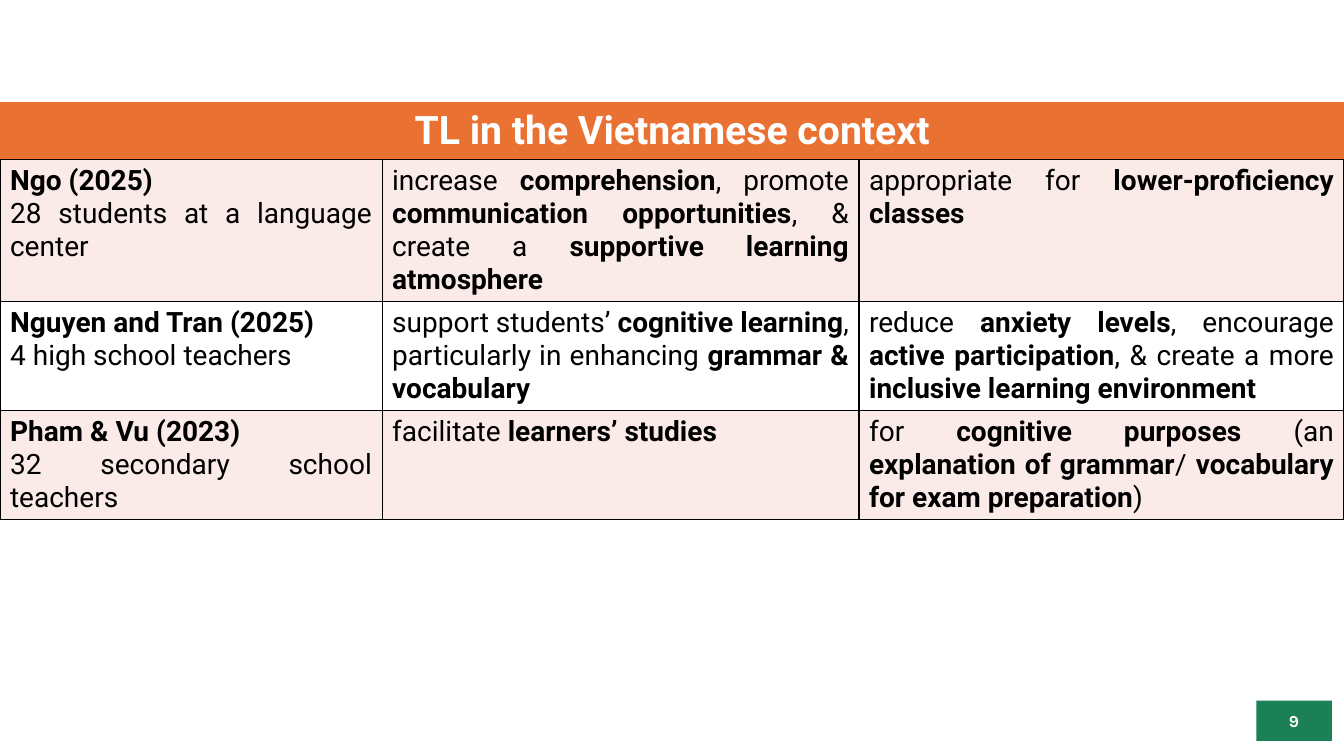
from lxml.etree import SubElement
from pptx import Presentation
from pptx.dml.color import RGBColor
from pptx.enum.shapes import MSO_SHAPE as Shape
from pptx.enum.text import MSO_ANCHOR as Anchor, PP_ALIGN as Align
from pptx.oxml.ns import qn
from pptx.util import Inches, Pt

ORANGE = RGBColor(0xE9, 0x71, 0x32)
PINK = RGBColor(0xFB, 0xEB, 0xE8)
GREEN = RGBColor(0x1B, 0x80, 0x56)
WHITE = RGBColor(0xFF, 0xFF, 0xFF)
BLACK = RGBColor(0, 0, 0)

WIDTH, HEIGHT = Inches(13.33), Inches(7.5)
COLS = (3.79, 4.73, 4.81)
ROWS = (0.56, 1.41, 1.08, 1.08)
TITLE = "*TL in the Vietnamese context*"
STUDIES = (
    ("*Ngo (2025)*\n28 students at a language center",
     "increase *comprehension*, promote *communication opportunities*, "
     "& create a *supportive learning atmosphere*",
     "appropriate for *lower-proficiency classes*"),
    ("*Nguyen and Tran (2025)*\n4 high school teachers",
     "support students’ *cognitive learning*, particularly in enhancing "
     "*grammar & vocabulary*",
     "reduce *anxiety levels*, encourage *active participation*, "
     "& create a more *inclusive learning environment*"),
    ("*Pham & Vu (2023)*\n32 secondary school teachers",
     "facilitate *learners’ studies*",
     "for *cognitive purposes *(an *explanation of grammar*/ "
     "*vocabulary for exam preparation*)"),
)


def write(frame, text, size=20, font="Roboto", color=BLACK, align=Align.JUSTIFY):
    """Fill a text frame; asterisks enclose bold words."""
    for i, line in enumerate(text.split("\n")):
        para = frame.add_paragraph() if i else frame.paragraphs[0]
        para.alignment = align
        for j, part in enumerate(line.split("*")):
            if part:
                run = para.add_run()
                run.text = part
                run.font.size, run.font.name = Pt(size), font
                run.font.bold = j % 2 == 1
                run.font.color.rgb = color


def paint(cell, fill, edge=BLACK):
    """Set the cell's fill and borders; the bottom one is always black."""
    props = cell._tc.get_or_add_tcPr()
    for side in "LRTB":
        line = SubElement(props, qn("a:ln" + side), w=str(Pt(1)))
        color = BLACK if side == "B" else edge
        SubElement(SubElement(line, qn("a:solidFill")), qn("a:srgbClr"), val=str(color))
    cell.fill.solid()
    cell.fill.fore_color.rgb = fill


def add_studies(slide):
    table = slide.shapes.add_table(
        len(ROWS), len(COLS), 0, Inches(1.02), WIDTH, Inches(sum(ROWS))).table
    for col, width in zip(table.columns, COLS):
        col.width = Inches(width)
    for row, height in zip(table.rows, ROWS):
        row.height = Inches(height)
    for cell in table.rows[0].cells:
        paint(cell, ORANGE, edge=ORANGE)
    head = table.cell(0, 0)
    head.merge(table.cell(0, len(COLS) - 1))
    write(head.text_frame, TITLE, size=28, color=WHITE, align=Align.CENTER)
    for r, study in enumerate(STUDIES, 1):
        for c, text in enumerate(study):
            cell = table.cell(r, c)
            paint(cell, PINK if r % 2 else WHITE)
            write(cell.text_frame, text)


def add_number(slide, text):
    box = slide.shapes.add_shape(
        Shape.RECTANGLE, Inches(12.46), Inches(6.95), Inches(0.75), Inches(0.4))
    box.shadow.inherit = False
    box.fill.solid()
    box.fill.fore_color.rgb = GREEN
    box.line.fill.background()
    box.text_frame.vertical_anchor = Anchor.MIDDLE
    write(box.text_frame, text, size=12, font="Karla", color=WHITE, align=Align.CENTER)


def main():
    deck = Presentation()
    deck.slide_width, deck.slide_height = WIDTH, HEIGHT
    slide = deck.slides.add_slide(deck.slide_layouts[6])
    add_number(slide, "*9*")
    add_studies(slide)
    deck.save("out.pptx")


if __name__ == "__main__":
    main()
